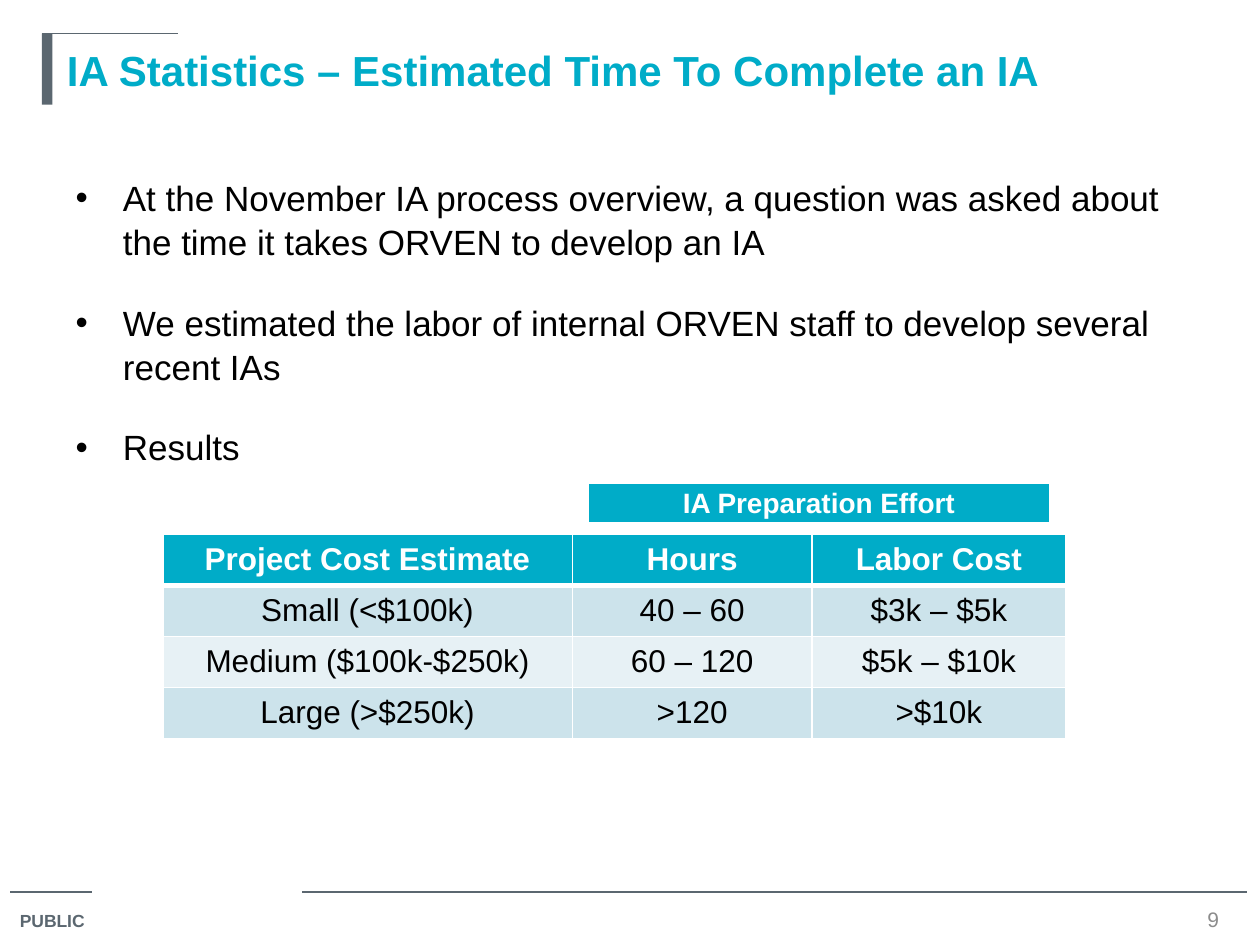
import pptx
import pptx.util
import pptx.dml.color
import pptx.enum.shapes
import pptx.enum.text
import pptx.oxml.ns
from lxml import etree

Pt = pptx.util.Pt
ALIGN = pptx.enum.text.PP_ALIGN
ANCHOR = pptx.enum.text.MSO_ANCHOR
COLORS = {"teal": "00ACC8", "slate": "5B6770", "grey": "8C8C8C", "black": "000000",
          "white": "FFFFFF", "band_dark": "CCE3EB", "band_light": "E7F1F5"}
BULLETS = [
    "At the November IA process overview, a question was asked about "
    "the time it takes ORVEN to develop an IA",
    "We estimated the labor of internal ORVEN staff to develop several recent IAs",
    "Results",
]
ESTIMATES = [
    ("Project Cost Estimate", "Hours", "Labor Cost"),
    ("Small (<$100k)", "40 – 60", "$3k – $5k"),
    ("Medium ($100k-$250k)", "60 – 120", "$5k – $10k"),
    ("Large (>$250k)", ">120", ">$10k"),
]


def color(name):
    return pptx.dml.color.RGBColor.from_string(COLORS[name])


def child(parent, tag, **attributes):
    return etree.SubElement(parent, pptx.oxml.ns.qn(tag), **attributes)


def place(sp, x, y, w, h):
    sp.left, sp.top, sp.width, sp.height = Pt(x), Pt(y), Pt(w), Pt(h)


def add_run(p, text, size, color_name, bold=False):
    r = p.add_run()
    r.text = text
    r.font.name = "Arial"
    r.font.size = Pt(size)
    r.font.bold = bold
    r.font.color.rgb = color(color_name)


def add_rule(s, x, y, length):
    """Draw a thin horizontal line."""
    line = s.shapes.add_connector(pptx.enum.shapes.MSO_CONNECTOR.STRAIGHT,
                                  Pt(x), Pt(y), Pt(x + length), Pt(y))
    line.line.color.rgb = color("slate")
    line.line.width = Pt(0.75)
    child(line._element.spPr, "a:effectLst")


def add_label(s, x, y, w, h, text, size, color_name, bold, align, anchor, wrap):
    sp = s.shapes.add_textbox(Pt(x), Pt(y), Pt(w), Pt(h))
    tf = sp.text_frame
    tf.word_wrap = wrap
    tf.vertical_anchor = anchor
    p = tf.paragraphs[0]
    p.alignment = align
    add_run(p, text, size, color_name, bold)


def add_footer(s, x, y, w):
    add_rule(s, x, y, 47)
    add_rule(s, x + 167, y, w - 167)
    add_label(s, x - 1.5, y + 6.5, 55.5, 20, "PUBLIC", 10, "slate", True,
              ALIGN.LEFT, ANCHOR.TOP, False)
    add_label(s, x + w - 34.5, y + 7.2, 30, 16.6, "9", 12, "grey", False,
              ALIGN.CENTER, ANCHOR.MIDDLE, True)


def add_title(s, x, y, w, h):
    """Place the title with its accent bar and rule."""
    bar = s.shapes.add_shape(pptx.enum.shapes.MSO_SHAPE.RECTANGLE,
                             Pt(x), Pt(y), Pt(6), Pt(h))
    bar.shadow.inherit = False
    bar.fill.solid()
    bar.fill.fore_color.rgb = color("slate")
    bar.line.fill.background()
    add_rule(s, x, y, 78)
    sp = s.shapes.title
    place(sp, x + 7, y, w - 7, h)
    tf = sp.text_frame
    tf.auto_size = pptx.enum.text.MSO_AUTO_SIZE.NONE
    tf.vertical_anchor = ANCHOR.MIDDLE
    p = tf.paragraphs[0]
    p.alignment = ALIGN.LEFT
    add_run(p, "IA Statistics – Estimated Time To Complete an IA", 24, "teal", True)


def add_bullets(s, x, y, w, h):
    sp = s.placeholders[1]
    place(sp, x, y, w, h)
    tf = sp.text_frame
    tf.auto_size = pptx.enum.text.MSO_AUTO_SIZE.NONE
    for i, text in enumerate(BULLETS):
        p = tf.add_paragraph() if i else tf.paragraphs[0]
        pPr = p._p.get_or_add_pPr()
        pPr.set("marL", str(Pt(27)))
        pPr.set("indent", str(-Pt(27)))
        child(pPr, "a:buFont", typeface="Arial")
        child(pPr, "a:buChar", char="•")
        p.line_spacing = 1.05
        p.space_before = Pt(21 if i else 0)
        add_run(p, text, 20, "black")


def set_borders(cell, top, bottom):
    tcPr = cell._tc.get_or_add_tcPr()
    for side, width in (("L", 1), ("R", 1), ("T", top), ("B", bottom)):
        ln = child(tcPr, "a:ln" + side, w=str(Pt(width)))
        child(child(ln, "a:solidFill"), "a:srgbClr", val=COLORS["white"])


def add_table(s, x, y, widths, row_height, rows, size, margin):
    """Add a centred table with a teal header and banded rows."""
    table = s.shapes.add_table(len(rows), len(widths), Pt(x), Pt(y), Pt(sum(widths)),
                               Pt(row_height * len(rows))).table
    for column, width in zip(table.columns, widths):
        column.width = Pt(width)
    for i, row in enumerate(rows):
        header = i == 0
        fill = "teal" if header else "band_dark" if i % 2 else "band_light"
        table.rows[i].height = Pt(row_height)
        for j, text in enumerate(row):
            cell = table.cell(i, j)
            set_borders(cell, 3 if i == 1 else 1, 3 if header else 1)
            cell.fill.solid()
            cell.fill.fore_color.rgb = color(fill)
            cell.vertical_anchor = ANCHOR.MIDDLE
            cell.margin_top = cell.margin_bottom = Pt(margin)
            p = cell.text_frame.paragraphs[0]
            p.alignment = ALIGN.CENTER
            add_run(p, text, size, "white" if header else "black", header)


def main():
    prs = pptx.Presentation()
    prs.slide_width, prs.slide_height = Pt(720), Pt(540)
    s = prs.slides.add_slide(prs.slide_layouts[1])
    add_footer(s, 5.75, 509.75, 707)
    add_title(s, 24, 19.2, 600, 40.7)
    add_bullets(s, 36, 95.8, 654, 180)
    add_table(s, 93, 305.2, [234, 137, 145], 29.2, ESTIMATES, 18, 3.6)
    add_table(s, 336, 276, [264], 23.4, [("IA Preparation Effort",)], 16, 2)
    prs.save("out.pptx")


if __name__ == "__main__":
    main()
